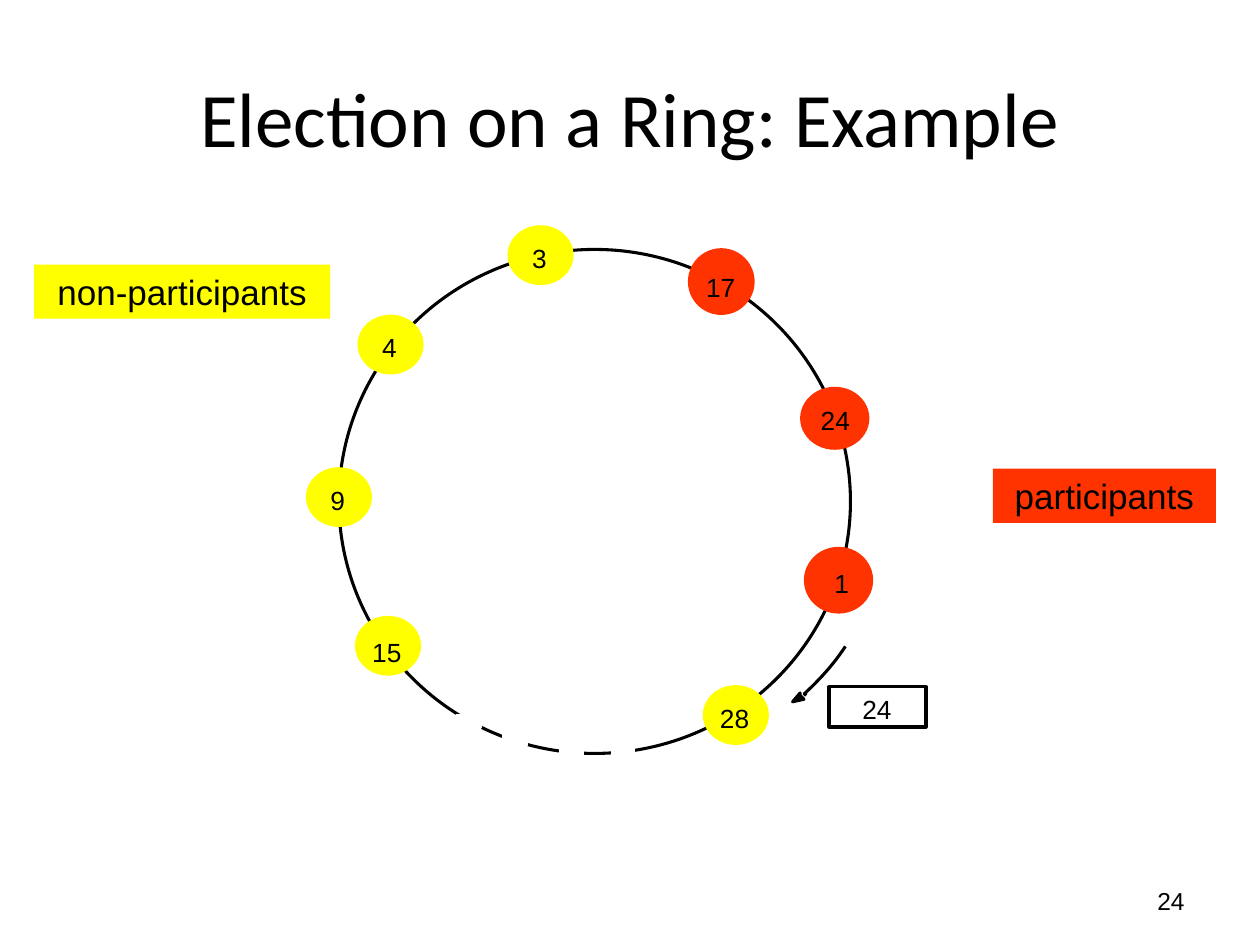
"""Build a slide showing a leader election running around a ring of processes."""
from typing import NamedTuple, Optional

from lxml import etree
from pptx import Presentation
from pptx.dml.color import RGBColor
from pptx.enum.shapes import MSO_CONNECTOR, MSO_SHAPE
from pptx.enum.text import MSO_ANCHOR, PP_ALIGN
from pptx.oxml.ns import qn
from pptx.util import Inches, Pt

BLACK = RGBColor(0x00, 0x00, 0x00)
WHITE = RGBColor(0xFF, 0xFF, 0xFF)
YELLOW = RGBColor(0xFF, 0xFF, 0x00)
RED = RGBColor(0xFF, 0x33, 0x00)
OVAL, RECTANGLE = MSO_SHAPE.OVAL, MSO_SHAPE.RECTANGLE
STRAIGHT = MSO_CONNECTOR.STRAIGHT
CENTER, RIGHT = PP_ALIGN.CENTER, PP_ALIGN.RIGHT
MIDDLE, TOP = MSO_ANCHOR.MIDDLE, MSO_ANCHOR.TOP
LINE_WIDTH = Pt(1.75)
DIGIT_WIDTH, LABEL_HEIGHT = 0.12, 0.25
ARC_STEPS = 12


class Box(NamedTuple):
    left: float
    top: float
    width: float
    height: float


class Point(NamedTuple):
    x: float
    y: float


class Process(NamedTuple):
    number: str
    box: Box
    label: Point
    participant: bool = False


class Legend(NamedTuple):
    text: str
    box: Box
    color: RGBColor


RING = Box(2.69, 1.98, 4.06, 4)
MESSAGE = Box(6.58, 5.45, 0.77, 0.32)
GAPS = [
    Box(3.62, 5.68, 0.19, 0.09),
    Box(4, 5.81, 0.18, 0.11),
    Box(4.45, 5.94, 0.17, 0.06),
    Box(4.86, 5.94, 0.17, 0.09),
]
PROCESSES = [
    Process("15", Box(2.83, 4.9, 0.5, 0.45), Point(2.95, 5.05)),
    Process("9", Box(2.44, 3.72, 0.5, 0.45), Point(2.62, 3.84)),
    Process("4", Box(2.85, 2.51, 0.5, 0.45), Point(3.03, 2.63)),
    Process("3", Box(4.04, 1.8, 0.5, 0.45), Point(4.22, 1.92)),
    Process("28", Box(5.59, 5.45, 0.5, 0.45), Point(5.71, 5.57)),
    Process("17", Box(5.46, 1.97, 0.53, 0.53), Point(5.6, 2.15), True),
    Process("24", Box(6.35, 3.07, 0.55, 0.5), Point(6.51, 3.21), True),
    Process("1", Box(6.38, 4.34, 0.55, 0.53), Point(6.62, 4.5), True),
]
LEGENDS = [
    Legend("participants", Box(7.88, 3.72, 1.77, 0.43), RED),
    Legend("non-participants", Box(0.27, 2.1, 2.35, 0.43), YELLOW),
]
ARC_CONTROLS = [Point(6.71, 5.13), Point(6.62, 5.27), Point(6.5, 5.4), Point(6.38, 5.51)]
ARROWHEAD = [Point(6.35, 5.52), Point(6.38, 5.55), Point(6.29, 5.57), Point(6.35, 5.5)]


def place(box: Box) -> list:
    """Return the box as a list of lengths."""
    return [Inches(value) for value in box]


def style(shape, fill: Optional[RGBColor], line: Optional[RGBColor]) -> None:
    """Set fill and line, and remove the shadow."""
    shape.shadow.inherit = False
    if fill is None:
        shape.fill.background()
    else:
        shape.fill.solid()
        shape.fill.fore_color.rgb = fill
    if line is None:
        shape.line.fill.background()
    else:
        shape.line.color.rgb = line
        shape.line.width = LINE_WIDTH


def add_shape(slide, kind, box: Box, fill: Optional[RGBColor] = None,
              line: Optional[RGBColor] = None):
    """Add a preset shape."""
    shape = slide.shapes.add_shape(kind, *place(box))
    style(shape, fill, line)
    return shape


def write(shape, text: str, size: int, font: str = "Arial", align=CENTER, anchor=MIDDLE):
    """Write one black paragraph into a shape and return its text frame."""
    frame = shape.text_frame
    frame.word_wrap = True
    frame.vertical_anchor = anchor
    paragraph = frame.paragraphs[0]
    paragraph.text = text
    paragraph.alignment = align
    paragraph.font.size = Pt(size)
    paragraph.font.name = font
    paragraph.font.color.rgb = BLACK
    return frame


def add_label(slide, text: str, corner: Point) -> None:
    """Add a number in a text box without margins."""
    box = Box(corner.x, corner.y, DIGIT_WIDTH * len(text), LABEL_HEIGHT)
    frame = write(slide.shapes.add_textbox(*place(box)), text, 15, anchor=TOP)
    frame.word_wrap = False
    frame.margin_left = frame.margin_right = frame.margin_top = frame.margin_bottom = 0


def add_path(slide, points: list[Point], closed: bool, fill: Optional[RGBColor]) -> None:
    """Add a black outline through the points."""
    start, *others = [(Inches(point.x), Inches(point.y)) for point in points]
    builder = slide.shapes.build_freeform(*start)
    builder.add_line_segments(others, close=closed)
    style(builder.convert_to_shape(), fill, BLACK)


def curve_point(controls: list[Point], t: float) -> Point:
    """Return the point at t on a cubic curve."""
    weights = [(1 - t) ** 3, 3 * t * (1 - t) ** 2, 3 * t ** 2 * (1 - t), t ** 3]
    return Point(sum(w * c.x for w, c in zip(weights, controls)),
                 sum(w * c.y for w, c in zip(weights, controls)))


def add_message_arrow(slide) -> None:
    """Draw the curved arrow that carries the message."""
    arc = [curve_point(ARC_CONTROLS, step / ARC_STEPS) for step in range(ARC_STEPS + 1)]
    add_path(slide, arc, False, None)
    add_path(slide, ARROWHEAD, True, BLACK)
    connector = slide.shapes.add_connector(
        STRAIGHT, Inches(6.4), Inches(5.5), Inches(6.38), Inches(5.52))
    connector.line.color.rgb = BLACK
    connector.line.width = LINE_WIDTH
    etree.SubElement(connector._element.spPr, qn("a:effectLst"))


def add_process(slide, process: Process) -> None:
    """Draw one process on the ring with its number."""
    fill, line = (RED, None) if process.participant else (YELLOW, YELLOW)
    add_shape(slide, OVAL, process.box, fill, line)
    add_label(slide, process.number, process.label)


def main() -> None:
    """Build and save the slide."""
    presentation = Presentation()
    presentation.slide_width, presentation.slide_height = Inches(10), Inches(7.5)
    slide = presentation.slides.add_slide(presentation.slide_layouts[6])
    title = slide.shapes.add_textbox(*place(Box(0.5, 0.3, 9, 1.25)))
    write(title, "Election on a Ring: Example", 44, "Calibri")
    page_number = slide.shapes.add_textbox(*place(Box(7.17, 6.95, 2.33, 0.4)))
    write(page_number, "24", 14, align=RIGHT)

    add_shape(slide, OVAL, RING, line=BLACK)
    for gap in GAPS:
        add_shape(slide, RECTANGLE, gap, WHITE, WHITE)
    add_message_arrow(slide)
    add_shape(slide, RECTANGLE, MESSAGE, WHITE, BLACK)
    add_label(slide, "24", Point(6.84, 5.5))
    for process in PROCESSES:
        add_process(slide, process)
    for legend in LEGENDS:
        write(add_shape(slide, RECTANGLE, legend.box, legend.color), legend.text, 20)
    presentation.save("out.pptx")


if __name__ == "__main__":
    main()
